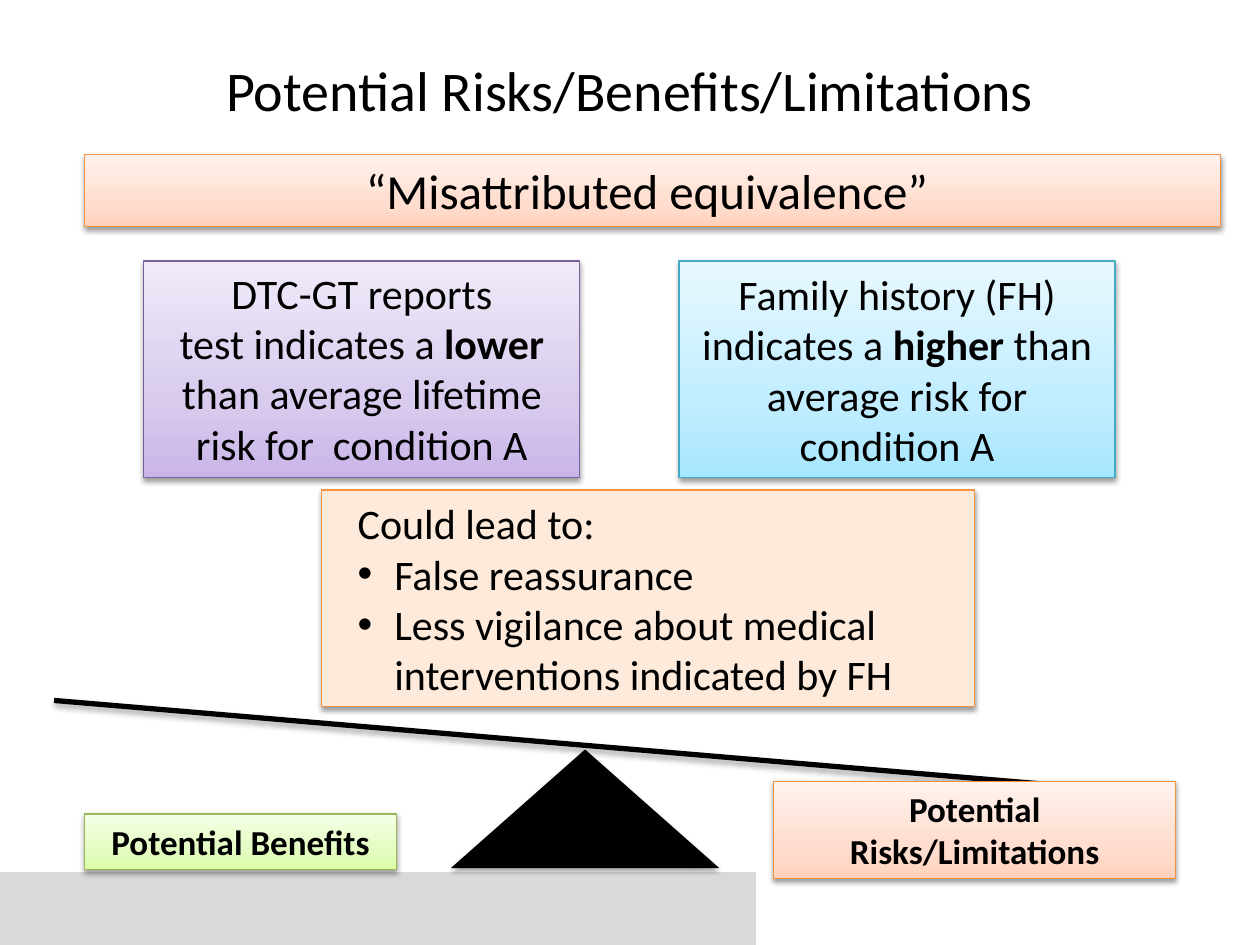
from copy import deepcopy
from dataclasses import dataclass

from lxml import etree
from pptx import Presentation
from pptx.dml.color import RGBColor
from pptx.enum import shapes, text
from pptx.oxml import ns
from pptx.util import Cm, Pt


@dataclass(frozen=True)
class Theme:
    """Colours, type sizes and line widths of the page."""
    font: str = "Calibri"
    ink: str = "000000"
    floor: str = "D9D9D9"
    peach: tuple = ("FFD2BD", "FFDED0", "FFF2ED")
    violet: tuple = ("C9B5E8", "D8CBEE", "F0EAF9")
    aqua: tuple = ("A7E6FF", "C1EDFF", "E7F8FF")
    lime: tuple = ("DAFDA7", "E4FCC2", "F5FFE7")
    cream: tuple = ("FDEADA",)
    orange_edge: str = "F69240"
    violet_edge: str = "7D60A0"
    aqua_edge: str = "46AAC5"
    lime_edge: str = "98B955"
    title: int = 32
    banner: int = 28
    body: int = 24
    label: int = 20
    edge: float = 0.75
    beam: float = 3


THEME = Theme()
CENTER = text.PP_ALIGN.CENTER
LEFT = text.PP_ALIGN.LEFT
TOP = text.MSO_ANCHOR.TOP
MIDDLE = text.MSO_ANCHOR.MIDDLE


def rgb(value):
    """Turn a hex string into a colour."""
    return RGBColor.from_string(value)


def cast_shadow(shape, distance, opacity):
    """Give a shape a soft shadow straight below it."""
    effects = etree.SubElement(shape._element.spPr, ns.qn("a:effectLst"))
    shadow = etree.SubElement(
        effects, ns.qn("a:outerShdw"), blurRad=str(Pt(3.1)),
        dist=str(Pt(distance)), dir="5400000", rotWithShape="0")
    colour = etree.SubElement(shadow, ns.qn("a:srgbClr"), val=THEME.ink)
    etree.SubElement(colour, ns.qn("a:alpha"), val=str(opacity * 1000))


def paint(shape, colours):
    """Fill a shape with one colour or a three-stop upward gradient."""
    if len(colours) == 1:
        shape.fill.solid()
        shape.fill.fore_color.rgb = rgb(colours[0])
        return
    shape.fill.gradient()
    shape.fill.gradient_angle = 90
    stop_list = shape._element.spPr.find(".//" + ns.qn("a:gsLst"))
    stop_list.insert(1, deepcopy(stop_list[0]))
    for stop, colour, position in zip(shape.fill.gradient_stops, colours, (0, 0.35, 1)):
        stop.color.rgb = rgb(colour)
        stop.position = position


def style_span(span, size, bold=False):
    """Set the font of one run."""
    span.font.name = THEME.font
    span.font.size = Pt(size)
    span.font.bold = bold
    span.font.color.rgb = rgb(THEME.ink)


def write(para, wording, size, align=CENTER, bold=False):
    """Write a paragraph in which ** marks bold words."""
    para.alignment = align
    for index, part in enumerate(wording.split("**")):
        span = para.add_run()
        span.text = part
        style_span(span, size, bold or index % 2 == 1)


def indent(para, margin, hanging=0, bullet=None):
    """Indent a paragraph and give it a bullet if asked."""
    props = para._p.get_or_add_pPr()
    props.set("marL", str(Cm(margin)))
    props.set("indent", str(Cm(-hanging)))
    if bullet:
        etree.SubElement(props, ns.qn("a:buFont"), typeface="Arial")
        etree.SubElement(props, ns.qn("a:buChar"), char=bullet)


def add_plain(page, kind, box, colour):
    """Add a flat shape without outline."""
    shape = page.shapes.add_shape(kind, *map(Cm, box))
    paint(shape, (colour,))
    shape.line.fill.background()
    return shape


def add_card(page, box, colours, edge, anchor=TOP):
    """Add an outlined, shadowed rectangle and return its text frame."""
    card = page.shapes.add_shape(shapes.MSO_SHAPE.RECTANGLE, *map(Cm, box))
    paint(card, colours)
    card.line.color.rgb = rgb(edge)
    card.line.width = Pt(THEME.edge)
    cast_shadow(card, 1.6, 38)
    frame = card.text_frame
    frame.word_wrap = True
    frame.vertical_anchor = anchor
    return frame


def add_title(page, box):
    """Fill the title placeholder."""
    title = page.shapes.title
    title.left, title.top, title.width, title.height = map(Cm, box)
    title.text_frame.text = "Potential Risks/Benefits/Limitations"
    title.text_frame.vertical_anchor = MIDDLE
    para = title.text_frame.paragraphs[0]
    para.alignment = CENTER
    style_span(para.runs[0], THEME.title)


def add_banner(page, box):
    """Add the topic banner."""
    frame = add_card(page, box, THEME.peach, THEME.orange_edge)
    write(frame.paragraphs[0], "“Misattributed equivalence” ", THEME.banner)


def add_comparison(page, box):
    """Set the two findings side by side."""
    left, top, width, height = box
    card_width = 8.79
    findings = (
        (left, THEME.violet, THEME.violet_edge, TOP,
         ("DTC-GT reports",
          "test indicates a **lower** than average lifetime risk for  condition A")),
        (left + width - card_width, THEME.aqua, THEME.aqua_edge, MIDDLE,
         ("Family history (FH) indicates a **higher** than average risk for condition A",)),
    )
    for x, colours, edge, anchor, lines in findings:
        frame = add_card(page, (x, top, card_width, height), colours, edge, anchor)
        for index, line in enumerate(lines):
            para = frame.add_paragraph() if index else frame.paragraphs[0]
            write(para, line, THEME.body)


def add_outcome(page, box):
    """Add the card that lists the consequences."""
    frame = add_card(page, box, THEME.cream, THEME.orange_edge, MIDDLE)
    lead = frame.paragraphs[0]
    indent(lead, 0.48)
    write(lead, "Could lead to:", THEME.body, LEFT)
    for line in ("False reassurance",
                 "Less vigilance about medical interventions indicated by FH"):
        para = frame.add_paragraph()
        indent(para, 1.22, 0.74, "•")
        write(para, line, THEME.body, LEFT)


def add_balance(page, box):
    """Draw the tilted scale with its two labels."""
    left, top, width, height = box
    pivot = add_plain(page, shapes.MSO_SHAPE.ISOSCELES_TRIANGLE,
                      (left + 8, top + 0.99, 5.41, 2.39), THEME.ink)
    cast_shadow(pivot, 1.8, 35)
    beam = page.shapes.add_connector(
        shapes.MSO_CONNECTOR.STRAIGHT,
        *map(Cm, (left, top, left + 21.41, top + 1.81)))
    beam.line.color.rgb = rgb(THEME.ink)
    beam.line.width = Pt(THEME.beam)
    cast_shadow(beam, 1.8, 35)
    labels = (
        ("Potential Benefits", (left + 0.61, top + 2.29, 6.3, 1.12),
         THEME.lime, THEME.lime_edge),
        ("Potential Risks/Limitations", (left + width - 8.1, top + height - 1.96, 8.1, 1.96),
         THEME.peach, THEME.orange_edge),
    )
    for wording, place, colours, edge in labels:
        frame = add_card(page, place, colours, edge)
        write(frame.paragraphs[0], wording, THEME.label, bold=True)


def main():
    """Build the deck."""
    deck = Presentation()
    deck.slide_width, deck.slide_height = Cm(25.4), Cm(19.05)
    page = deck.slides.add_slide(deck.slide_layouts[5])
    floor = add_plain(page, shapes.MSO_SHAPE.RECTANGLE, (0, 17.58, 15.24, 1.47), THEME.floor)
    floor.shadow.inherit = False
    add_title(page, (1.27, 0.2, 22.86, 3.18))
    add_balance(page, (1.09, 14.12, 22.61, 3.59))
    add_banner(page, (1.7, 3.12, 22.91, 1.45))
    add_comparison(page, (2.9, 5.26, 19.58, 4.37))
    add_outcome(page, (6.48, 9.88, 13.16, 4.37))
    deck.save("out.pptx")


if __name__ == "__main__":
    main()
